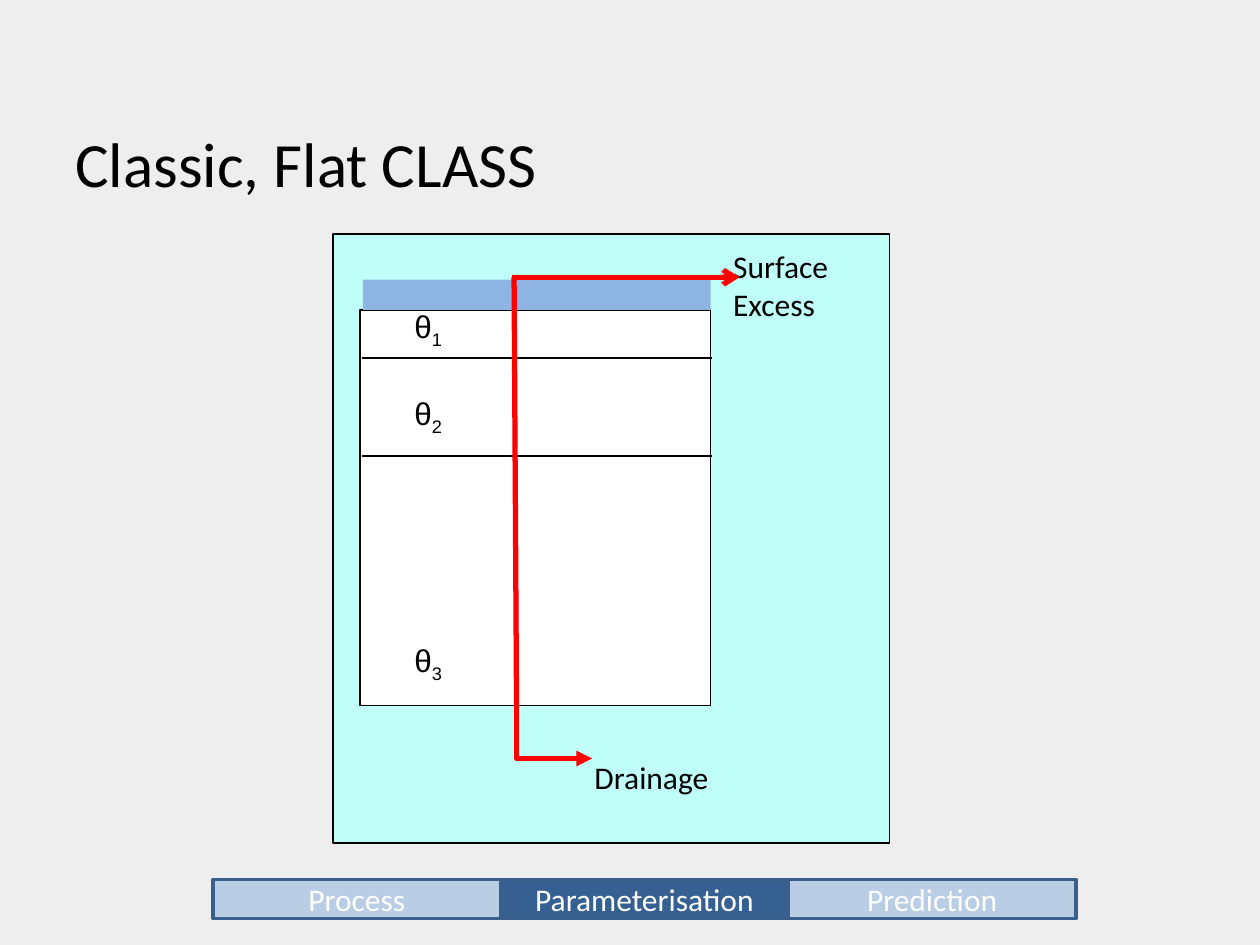
import dataclasses

import pptx
import pptx.dml.color
import pptx.enum.shapes
import pptx.enum.text
import pptx.oxml.ns
import pptx.util
from lxml import etree

Inches = pptx.util.Inches
Pt = pptx.util.Pt
Shape = pptx.enum.shapes.MSO_SHAPE
Anchor = pptx.enum.text.MSO_ANCHOR
Align = pptx.enum.text.PP_ALIGN


@dataclasses.dataclass(frozen=True)
class Theme:
    """Colours, fonts and sizes of the slide."""
    background: str = "EEEEEE"
    ink: str = "000000"
    white: str = "FFFFFF"
    ground: str = "C0FEF9"
    pond: str = "8EB4E3"
    flow: str = "FF0000"
    tab: str = "B9CDE5"
    active_tab: str = "376092"
    tab_edge: str = "3A5F8C"
    font: str = "Calibri"
    symbol_font: str = "Arial"
    title_size: int = 36
    body_size: int = 18
    thin: int = 1
    edge: int = 2
    thick: int = 3


THEME = Theme()


def rgb(value):
    """Return a colour object for a hex string."""
    return pptx.dml.color.RGBColor.from_string(value)


def style_line(line, color, width, tail=None):
    """Colour a line and give it an optional arrowhead at its end."""
    line.color.rgb = rgb(color)
    line.width = Pt(width)
    if tail:
        properties = line._get_or_add_ln()
        etree.SubElement(properties, pptx.oxml.ns.qn("a:tailEnd"), type=tail)


def style_text(frame, font, size, color):
    """Format every run in a text frame."""
    for para in frame.paragraphs:
        for span in para.runs:
            span.font.name = font
            span.font.size = Pt(size)
            span.font.color.rgb = rgb(color)


def add_rectangle(shapes, left, top, width, height, fill, edge=None, weight=THEME.thin):
    """Add a filled rectangle with an optional outline."""
    box = shapes.add_shape(Shape.RECTANGLE, Inches(left), Inches(top), Inches(width), Inches(height))
    box.shadow.inherit = False
    box.fill.solid()
    box.fill.fore_color.rgb = rgb(fill)
    if edge:
        style_line(box.line, edge, weight)
    else:
        box.line.fill.background()
    return box


def add_line(shapes, start, end, color, width, tail=None):
    """Add a straight line between two points."""
    line = shapes.add_connector(
        pptx.enum.shapes.MSO_CONNECTOR.STRAIGHT, *(Inches(value) for value in (*start, *end)))
    style_line(line.line, color, width, tail)
    etree.SubElement(line._element.spPr, pptx.oxml.ns.qn("a:effectLst"))


def add_label(shapes, left, top, width, height, text, size=THEME.body_size, font=THEME.font):
    """Add a text box and return its frame."""
    frame = shapes.add_textbox(Inches(left), Inches(top), Inches(width), Inches(height)).text_frame
    frame.word_wrap = True
    frame.margin_right = 0
    frame.text = text
    style_text(frame, font, size, THEME.ink)
    return frame


def add_theta(shapes, left, top, index):
    """Add a soil moisture symbol with its layer index."""
    frame = add_label(shapes, left, top, 0.46, 0.51, "θ", font=THEME.symbol_font)
    span = frame.paragraphs[0].add_run()
    span.text = str(index)
    style_text(frame, THEME.symbol_font, THEME.body_size, THEME.ink)
    span.font._element.set("baseline", "-25000")


def add_title(page, left, top, width, height):
    """Place the slide title at the bottom of its box."""
    frame = add_label(page.shapes, left, top, width, height, "Classic, Flat CLASS", THEME.title_size)
    frame.vertical_anchor = Anchor.BOTTOM


def add_soil_diagram(page, left, top, width, height):
    """Draw the soil column with its layers and water flows."""
    shapes = page.shapes.add_group_shape().shapes
    add_rectangle(shapes, left, top, width, height, THEME.ground, THEME.ink)
    column_left, column_top = left + 0.22, top + 0.6
    add_rectangle(shapes, column_left, column_top, 2.78, 3.14, THEME.white, THEME.ink)
    for depth in (0.38, 1.16):
        level = column_top + depth
        add_line(shapes, (column_left + 0.01, level), (column_left + 2.79, level), THEME.ink, THEME.thin)
    for index, offset in enumerate((0.53, 1.22, 3.18), start=1):
        add_theta(shapes, left + 0.55, top + offset, index)

    drain_x, drain_y = left + 1.46, top + 3.76
    builder = shapes.build_freeform(Inches(drain_x), Inches(drain_y))
    corner = (Inches(drain_x), Inches(drain_y + 0.4))
    tip = (Inches(drain_x + 0.6), Inches(drain_y + 0.4))
    builder.add_line_segments([corner, tip], close=False)
    drain = builder.convert_to_shape()
    drain.shadow.inherit = False
    drain.fill.background()
    style_line(drain.line, THEME.flow, THEME.thick, "triangle")

    add_label(shapes, left + 1.98, top + 4.11, 1.43, 0.51, "Drainage")
    add_label(shapes, left + 3.08, top + 0.05, 1.23, 0.91, "Surface\nExcess")
    add_rectangle(shapes, left + 0.24, top + 0.36, 2.76, 0.24, THEME.pond)
    surface_y = top + 0.34
    add_line(shapes, (left + 1.42, surface_y), (left + 3.23, surface_y), THEME.flow, THEME.thick, "arrow")
    add_line(shapes, (drain_x, drain_y), (left + 1.44, surface_y), THEME.flow, THEME.thick)


def add_section_bar(page, left, top, width, height, names, active):
    """Place equal section tabs and highlight the active one."""
    step = width / len(names)
    for index, name in enumerate(names):
        fill = THEME.active_tab if name == active else THEME.tab
        box = add_rectangle(
            page.shapes, left + index * step, top, step, height, fill, THEME.tab_edge, THEME.edge)
        frame = box.text_frame
        frame.text = name
        frame.vertical_anchor = Anchor.MIDDLE
        frame.paragraphs[0].alignment = Align.CENTER
        style_text(frame, THEME.font, THEME.body_size, THEME.white)


def main():
    """Build and save the slide."""
    deck = pptx.Presentation()
    deck.slide_width, deck.slide_height = Inches(10), Inches(7.5)
    page = deck.slides.add_slide(deck.slide_layouts[6])
    page.background.fill.solid()
    page.background.fill.fore_color.rgb = rgb(THEME.background)
    add_title(page, 0.5, 0.39, 9, 1.25)
    add_soil_diagram(page, 2.64, 1.86, 4.42, 4.83)
    names = ("Process", "Parameterisation", "Prediction")
    add_section_bar(page, 1.69, 6.98, 6.85, 0.31, names, "Parameterisation")
    deck.save("out.pptx")


if __name__ == "__main__":
    main()
